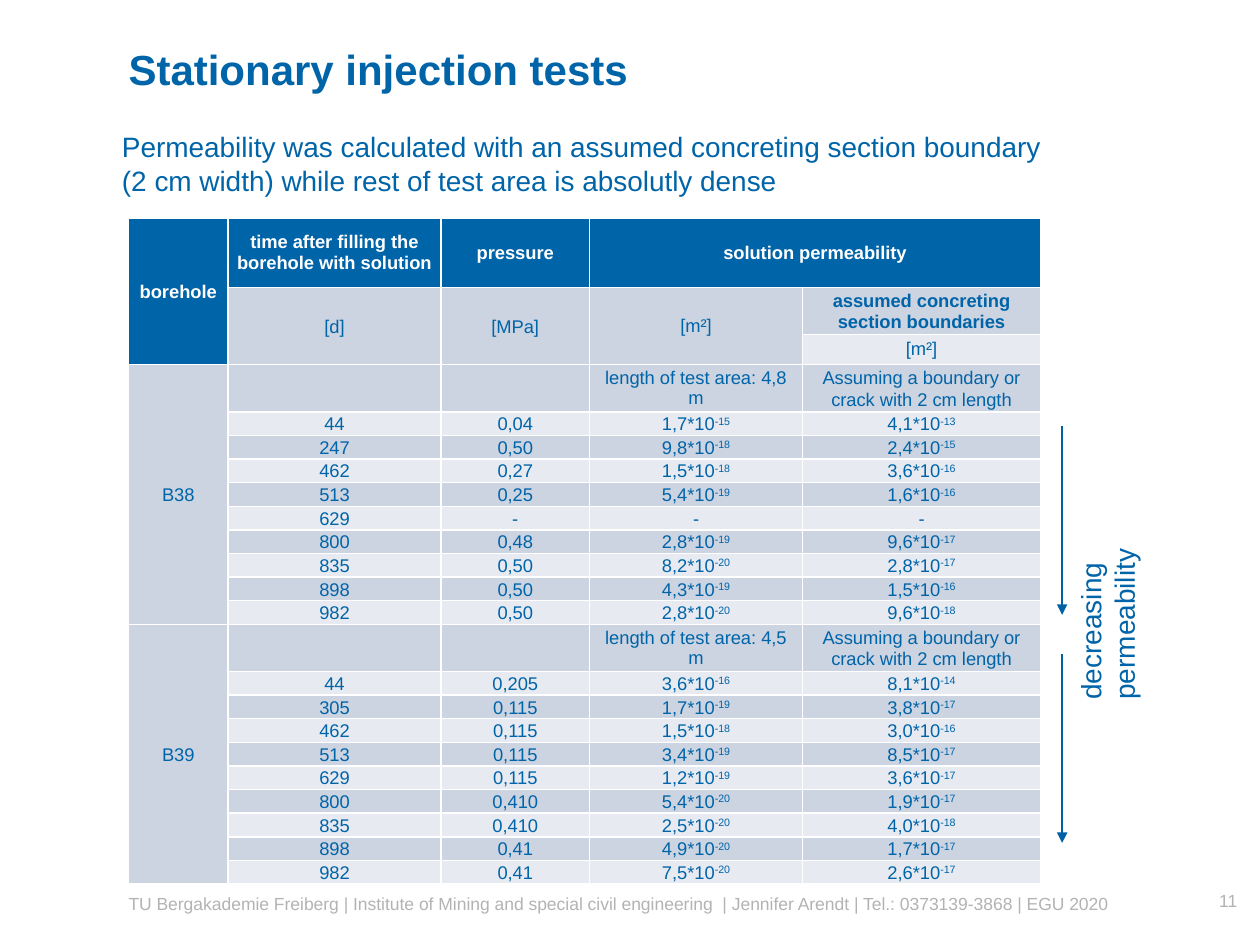
from pptx import Presentation
from pptx.dml.color import RGBColor
from pptx.enum.shapes import MSO_CONNECTOR
from pptx.enum.text import MSO_ANCHOR, PP_ALIGN
from pptx.oxml.ns import qn
from pptx.util import Inches, Pt
from lxml import etree

STRAIGHT = MSO_CONNECTOR.STRAIGHT
MIDDLE, TOP = MSO_ANCHOR.MIDDLE, MSO_ANCHOR.TOP
LEFT, CENTER, RIGHT = PP_ALIGN.LEFT, PP_ALIGN.CENTER, PP_ALIGN.RIGHT

BLUE = RGBColor(0x00, 0x64, 0xA8)
ARROW_BLUE = RGBColor(0x00, 0x62, 0xA4)
WHITE = RGBColor(0xFF, 0xFF, 0xFF)
GREY = RGBColor(0xB3, 0xB3, 0xB3)
DARK_BAND = RGBColor(0xCC, 0xD3, 0xE1)
LIGHT_BAND = RGBColor(0xE7, 0xEA, 0xF1)

FONT = "Arial"
MARGIN = 1.02
TEXT_WIDTH = 7.99
COLUMNS = [0.79, 1.69, 1.18, 1.69, 1.89]
HEADER_ROWS = [0.55, 0.35, 0.24]
SECTION_ROW, DATA_ROW = 0.36, 0.17

BOUNDARY = "Assuming a boundary or crack with 2 cm length"
# Per borehole: length of the test area, then time, pressure and both
# permeabilities as mantissa^exponent
BOREHOLES = {
    "B38": ("4,8 m", [
        ("44", "0,04", "1,7*10^-15", "4,1*10^-13"),
        ("247", "0,50", "9,8*10^-18", "2,4*10^-15"),
        ("462", "0,27", "1,5*10^-18", "3,6*10^-16"),
        ("513", "0,25", "5,4*10^-19", "1,6*10^-16"),
        ("629", "-", "-", "-"),
        ("800", "0,48", "2,8*10^-19", "9,6*10^-17"),
        ("835", "0,50", "8,2*10^-20", "2,8*10^-17"),
        ("898", "0,50", "4,3*10^-19", "1,5*10^-16"),
        ("982", "0,50", "2,8*10^-20", "9,6*10^-18"),
    ]),
    "B39": ("4,5 m", [
        ("44", "0,205", "3,6*10^-16", "8,1*10^-14"),
        ("305", "0,115", "1,7*10^-19", "3,8*10^-17"),
        ("462", "0,115", "1,5*10^-18", "3,0*10^-16"),
        ("513", "0,115", "3,4*10^-19", "8,5*10^-17"),
        ("629", "0,115", "1,2*10^-19", "3,6*10^-17"),
        ("800", "0,410", "5,4*10^-20", "1,9*10^-17"),
        ("835", "0,410", "2,5*10^-20", "4,0*10^-18"),
        ("898", "0,41", "4,9*10^-20", "1,7*10^-17"),
        ("982", "0,41", "7,5*10^-20", "2,6*10^-17"),
    ]),
}

deck = Presentation()
deck.slide_width, deck.slide_height = Inches(10), Inches(7.5)
page = deck.slides.add_slide(deck.slide_layouts[6])


def add_text(text, left, top, width, height, size, color,
             align=LEFT, anchor=TOP, bold=False, inset=(0, 0)):
    box = page.shapes.add_textbox(*map(Inches, (left, top, width, height)))
    frame = box.text_frame
    frame.word_wrap = True
    frame.vertical_anchor = anchor
    frame.margin_left = frame.margin_right = Inches(inset[0])
    frame.margin_top = frame.margin_bottom = Inches(inset[1])
    para = frame.paragraphs[0]
    para.text = text
    para.alignment = align
    para.font.name, para.font.size, para.font.bold = FONT, Pt(size), bold
    para.font.color.rgb = color
    return box


def fill_cell(cell, text, fill, color, bold, spaced):
    cell.fill.solid()
    cell.fill.fore_color.rgb = fill
    cell.vertical_anchor = MIDDLE
    cell.margin_left = cell.margin_right = Inches(0.07)
    cell.margin_top = cell.margin_bottom = 0
    para = cell.text_frame.paragraphs[0]
    para.alignment = CENTER
    if spaced:
        para.line_spacing = 1.07
        para.space_before = para.space_after = Pt(1)
    para.font.name, para.font.size, para.font.bold = FONT, Pt(10.5), bold
    para.font.color.rgb = color
    base, _, exponent = text.partition("^")
    para.add_run().text = base
    if exponent:
        span = para.add_run()
        span.text = exponent
        span.font._element.set("baseline", "30000")


# Title, footer and page number
add_text("Stationary injection tests", MARGIN, 0.2, TEXT_WIDTH, 0.69, 24, BLUE,
         anchor=MIDDLE, bold=True)
add_text("TU Bergakademie Freiberg | Institute of Mining and special civil engineering  "
         "| Jennifer Arendt | Tel.: 0373139-3868 | EGU 2020",
         MARGIN, 7.09, TEXT_WIDTH, 0.24, 10, GREY)
add_text("11", 9.02, 7.06, 0.8, 0.24, 10, GREY, align=RIGHT)

# Table contents
rows = [
    ("borehole", "time after filling the borehole with solution", "pressure",
     "solution permeability", ""),
    ("", "[d]", "[MPa]", "[m²]", "assumed concreting section boundaries"),
    ("", "", "", "", "[m²]"),
]
heights = list(HEADER_ROWS)
merges = [(0, 0, 2, 0), (0, 3, 0, 4)] + [(1, column, 2, column) for column in (1, 2, 3)]
for borehole, (length, measurements) in BOREHOLES.items():
    first = len(rows)
    rows.append((borehole, "", "", f"length of test area: {length}", BOUNDARY))
    rows += [("", *values) for values in measurements]
    heights += [SECTION_ROW] + [DATA_ROW] * len(measurements)
    merges.append((first, 0, len(rows) - 1, 0))

# Permeability table
table = page.shapes.add_table(
    len(rows), len(COLUMNS), Inches(MARGIN), Inches(1.73),
    Inches(sum(COLUMNS)), Inches(sum(heights))).table
for column, width in zip(table.columns, COLUMNS):
    column.width = Inches(width)
for row, height in zip(table.rows, heights):
    row.height = Inches(height)
for r, texts in enumerate(rows):
    for c, text in enumerate(texts):
        header = r == 0 or (c == 0 and r < len(HEADER_ROWS))
        band = DARK_BAND if r % 2 or c == 0 else LIGHT_BAND
        fill_cell(table.cell(r, c), text,
                  BLUE if header else band,
                  WHITE if header else BLUE,
                  bold=header or (r, c) == (1, 4),
                  spaced=not (text.startswith(("time", "length")) or text in ("", "[m²]")))
for top, left, bottom, right in merges:
    table.cell(top, left).merge(table.cell(bottom, right))

# Explanation above the table
add_text("Permeability was calculated with an assumed concreting section boundary "
         "(2 cm width) while rest of test area is absolutly dense",
         0.87, 0.98, 7.56, 0.64, 16, BLUE, inset=(0.1, 0.05))

# One downward arrow per borehole
for top in (3.38, 5.19):
    arrow = page.shapes.add_connector(
        STRAIGHT, Inches(8.43), Inches(top), Inches(8.43), Inches(top + 1.5))
    arrow.line.color.rgb = ARROW_BLUE
    arrow.line.width = Pt(1.5)
    etree.SubElement(arrow.line._ln, qn("a:tailEnd"), type="triangle")
    etree.SubElement(arrow._element.spPr, qn("a:effectLst"))

# Label beside the arrows, reading upwards
label = add_text("decreasing permeability", 7.57, 4.11, 2.44, 0.64, 16, BLUE,
                 inset=(0.1, 0.05))
label.rotation = 270

deck.save("out.pptx")
